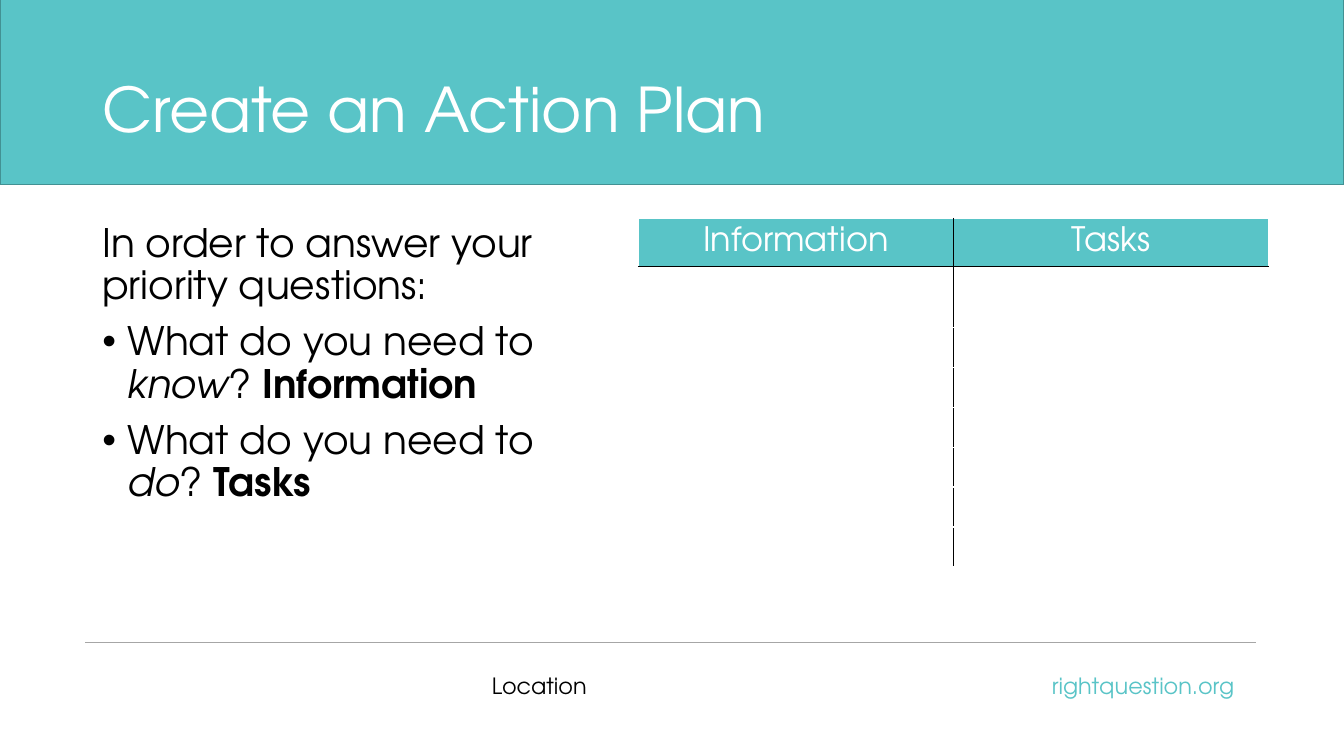
from lxml.etree import SubElement
from pptx import Presentation
from pptx.dml.color import RGBColor
from pptx.enum.shapes import MSO_CONNECTOR as CONNECTOR, MSO_SHAPE as SHAPE
from pptx.enum.text import MSO_ANCHOR as ANCHOR, PP_ALIGN as ALIGN
from pptx.oxml.ns import qn
from pptx.util import Pt

PX = 9525
FONT = "TeX Gyre Adventor"
TEAL = RGBColor(0x59, 0xC4, 0xC7)
DARK_TEAL = RGBColor(0x42, 0x91, 0x93)
GRAY = RGBColor(0xA6, 0xA6, 0xA6)
BLACK = RGBColor(0, 0, 0)
WHITE = RGBColor(0xFF, 0xFF, 0xFF)

HEADERS = ["Information", "Tasks"]
ROW_HEIGHTS = [46, 58] + [38] * 6
COLUMN_WIDTH = 300
INTRO = "In order to answer your priority questions:"
QUESTIONS = [("know", "Information"), ("do", "Tasks")]


def px(*values):
    return [value * PX for value in values]


def add_run(paragraph, text, size, color, bold=False, italic=False):
    run = paragraph.add_run()
    run.text = text
    font = run.font
    font.name, font.size, font.bold, font.italic = FONT, Pt(size), bold, italic
    font.color.rgb = color


def add_text_frame(slide, box, anchor=ANCHOR.TOP):
    frame = slide.shapes.add_textbox(*px(*box)).text_frame
    frame.word_wrap = True
    frame.vertical_anchor = anchor
    frame.paragraphs[0].line_spacing = 0.9
    return frame


def add_label(slide, box, text, size, color, align=ALIGN.LEFT, anchor=ANCHOR.TOP):
    paragraph = add_text_frame(slide, box, anchor).paragraphs[0]
    paragraph.alignment = align
    add_run(paragraph, text, size, color)


def add_band(slide, box):
    band = slide.shapes.add_shape(SHAPE.RECTANGLE, *px(*box))
    band.shadow.inherit = False
    band.fill.solid()
    band.fill.fore_color.rgb = TEAL
    band.line.color.rgb = DARK_TEAL
    band.line.width = Pt(1)


def add_rule(slide, left, right, y):
    rule = slide.shapes.add_connector(CONNECTOR.STRAIGHT, *px(left, y, right, y))
    rule.line.color.rgb = GRAY
    rule.line.width = Pt(0.5)
    SubElement(rule._element.spPr, qn("a:effectLst"))


def add_bullet(paragraph):
    properties = paragraph._p.get_or_add_pPr()
    properties.set("marL", str(24 * PX))
    properties.set("indent", str(-24 * PX))
    SubElement(properties, qn("a:buFont"), typeface="Arial")
    SubElement(properties, qn("a:buChar"), char="•")


def add_questions(slide, box):
    frame = add_text_frame(slide, box)
    add_run(frame.paragraphs[0], INTRO, 28, BLACK)
    for verb, heading in QUESTIONS:
        paragraph = frame.add_paragraph()
        add_bullet(paragraph)
        paragraph.line_spacing = 0.9
        paragraph.space_before = Pt(10)
        add_run(paragraph, "What do you need to ", 28, BLACK)
        add_run(paragraph, verb, 28, BLACK, italic=True)
        add_run(paragraph, "? ", 28, BLACK)
        add_run(paragraph, heading, 28, BLACK, bold=True)


def set_borders(cell, black_sides):
    properties = cell._tc.get_or_add_tcPr()
    for side in "LRTB":
        line = SubElement(properties, qn("a:ln" + side), w=str(Pt(1)))
        fill = SubElement(line, qn("a:solidFill"))
        color = BLACK if side in black_sides else WHITE
        SubElement(fill, qn("a:srgbClr"), val=str(color))


def add_plan_table(slide, left, top):
    size = COLUMN_WIDTH * len(HEADERS), sum(ROW_HEIGHTS)
    frame = slide.shapes.add_table(len(ROW_HEIGHTS), len(HEADERS), *px(left, top, *size))
    table = frame.table
    table.first_row = table.horz_banding = False
    for column in table.columns:
        column.width = COLUMN_WIDTH * PX
    for row_index, height in enumerate(ROW_HEIGHTS):
        table.rows[row_index].height = height * PX
        for column_index, header in enumerate(HEADERS):
            cell = table.cell(row_index, column_index)
            cell.margin_top = cell.margin_bottom = 0
            cell.vertical_anchor = ANCHOR.MIDDLE
            inner_side = "RL"[column_index]
            set_borders(cell, inner_side + {0: "B", 1: "T"}.get(row_index, ""))
            if row_index == 0:
                cell.fill.solid()
                cell.fill.fore_color.rgb = TEAL
                paragraph = cell.text_frame.paragraphs[0]
                paragraph.alignment = ALIGN.CENTER
                add_run(paragraph, header, 24, WHITE)
            else:
                cell.fill.background()


def main():
    presentation = Presentation()
    presentation.slide_width, presentation.slide_height = px(1280, 720)
    slide = presentation.slides.add_slide(presentation.slide_layouts[6])
    add_label(slide, (459, 638, 289, 64), "Location", 16, BLACK)
    add_label(slide, (896, 638, 289, 64), "rightquestion.org", 16, TEAL, ALIGN.RIGHT)
    add_band(slide, (0, -2, 1280, 178))
    add_rule(slide, 81, 1196, 612)
    add_questions(slide, (88, 208, 505, 435))
    add_label(slide, (88, 38, 1104, 139), "Create an Action Plan", 44, WHITE,
              anchor=ANCHOR.MIDDLE)
    add_plan_table(slide, 608, 208)
    presentation.save("out.pptx")


if __name__ == "__main__":
    main()
